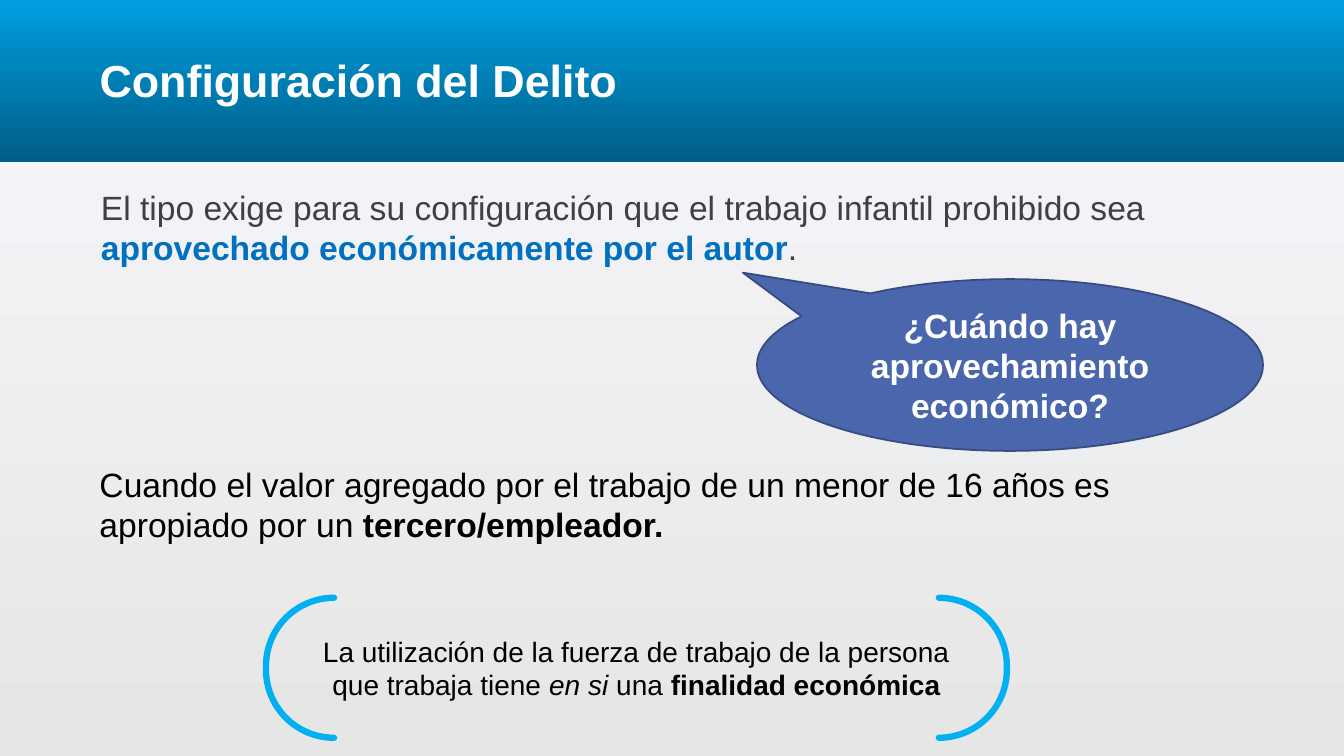
from copy import deepcopy

from pptx import Presentation
from pptx.dml.color import RGBColor
from pptx.enum.shapes import MSO_SHAPE as SHAPE
from pptx.enum.text import MSO_ANCHOR as ANCHOR, PP_ALIGN as ALIGN
from pptx.oxml.ns import qn
from pptx.util import Pt

FONT = "Arial"
SPACED = {"space_before": Pt(4.8), "space_after": Pt(6)}


def color(hex_str):
    return RGBColor.from_string(hex_str)


def set_attrs(obj, fmt):
    for name, value in fmt.items():
        setattr(obj, name, value)


def set_gradient(fill, root, angle, stops):
    """Fill with (position, colour) stops; root is the element holding the fill."""
    fill.gradient()
    fill.gradient_angle = angle
    gs_list = next(root.iter(qn("a:gsLst")))
    while len(gs_list) < len(stops):
        gs_list.append(deepcopy(gs_list[-1]))
    for stop, (position, hex_str) in zip(fill.gradient_stops, stops):
        stop.position = position
        stop.color.rgb = color(hex_str)


def write_text(sp, runs, size, hex_str, anchor=ANCHOR.TOP, para=None):
    """Write one paragraph from (text, font format) runs."""
    tf = sp.text_frame
    set_attrs(tf, {"word_wrap": True, "vertical_anchor": anchor})
    p = tf.paragraphs[0]
    set_attrs(p, {"alignment": ALIGN.LEFT, **(para or {})})
    for text, fmt in runs:
        fmt = dict(fmt)
        run_color = fmt.pop("color", hex_str)
        r = p.add_run()
        r.text = text
        set_attrs(r.font, {"name": FONT, "size": Pt(size), **fmt})
        r.font.color.rgb = color(run_color)


def add_text(s, box, runs, size, hex_str, **layout):
    sp = s.shapes.add_textbox(*map(Pt, box))
    write_text(sp, runs, size, hex_str, **layout)


def add_shape(s, kind, box, fill=None, line=None, adjustments=()):
    """Add a preset shape; line is (colour, width)."""
    sp = s.shapes.add_shape(kind, *map(Pt, box))
    sp.shadow.inherit = False
    for i, value in enumerate(adjustments):
        sp.adjustments[i] = value
    if fill:
        sp.fill.solid()
        sp.fill.fore_color.rgb = color(fill)
    else:
        sp.fill.background()
    if line:
        sp.line.color.rgb = color(line[0])
        sp.line.width = Pt(line[1])
    else:
        sp.line.fill.background()
    return sp


def main():
    prs = Presentation()
    set_attrs(prs, {"slide_width": Pt(960), "slide_height": Pt(540)})
    s = prs.slides.add_slide(prs.slide_layouts[6])
    bold = {"bold": True}

    # Background and title band
    set_gradient(s.background.fill, s._element, 270,
                 [(0.03, "F6F7FB"), (1, "E6E6E6")])
    band = add_shape(s, SHAPE.RECTANGLE, (0, 0, 960, 116))
    set_gradient(band.fill, band._element, 90,
                 [(0, "005E86"), (0.62, "0086BF"), (1, "009FE3")])
    add_text(s, (64, 18.7, 832, 76.3), [("Configuración del Delito", bold)],
             32, "FEFEFE", anchor=ANCHOR.MIDDLE)

    # Statement of the offence
    add_text(s, (65, 129.6, 831, 82), [
        ("El tipo exige para su configuración que el trabajo infantil prohibido sea ", {}),
        ("aprovechado económicamente por el autor", {"bold": True, "color": "0070C0"}),
        (".", {}),
    ], 24, "404040", para=SPACED)

    # Question callout
    callout = add_shape(s, SHAPE.OVAL_CALLOUT, (540.7, 199.4, 361.5, 122.7),
                        "4A66AC", ("374B7F", 1.25), (-0.528, -0.538))
    write_text(callout, [("¿Cuándo hay aprovechamiento económico?", bold)],
               24, "FFFFFF", ANCHOR.MIDDLE, {"alignment": ALIGN.CENTER, **SPACED})

    # Answer
    add_text(s, (64, 327.6, 781, 65.5), [
        ("Cuando el valor agregado por el trabajo de un menor de 16 años es apropiado por un ", {}),
        ("tercero/empleador.", bold),
    ], 24, "000000")

    # Bracketed conclusion with round line ends
    bracket = add_shape(s, SHAPE.DOUBLE_BRACKET, (190, 427, 529.2, 100),
                        line=("00B0F0", 4.5), adjustments=(0.486,))
    bracket.line._get_or_add_ln().set("cap", "rnd")
    write_text(bracket, [
        ("La utilización de la fuerza de trabajo de la persona que trabaja tiene ", {}),
        ("en si ", {"italic": True}),
        ("una ", {}),
        ("finalidad económica", bold),
    ], 20, "000000", ANCHOR.MIDDLE, {"alignment": ALIGN.CENTER})

    prs.save("out.pptx")


if __name__ == "__main__":
    main()
